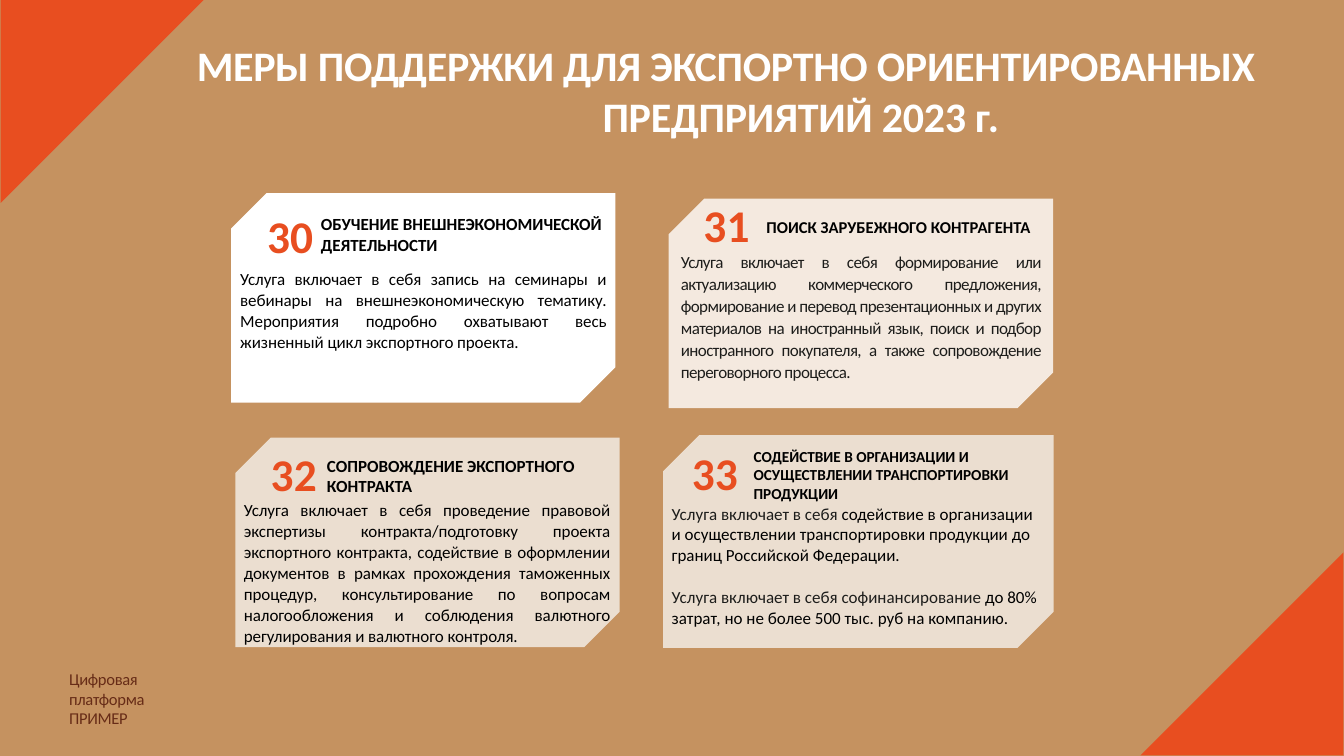
from dataclasses import dataclass

from pptx import Presentation
from pptx.dml.color import RGBColor
from pptx.enum.shapes import MSO_SHAPE
from pptx.enum.text import MSO_ANCHOR, MSO_AUTO_SIZE, PP_ALIGN
from pptx.util import Emu, Pt

PX = 9144
FONT = "Calibri"
SAND = RGBColor(0xC5, 0x92, 0x60)
ORANGE = RGBColor(0xE8, 0x4E, 0x20)
WHITE = RGBColor(0xFF, 0xFF, 0xFF)
CREAM = RGBColor(0xF4, 0xE9, 0xDF)
BEIGE = RGBColor(0xEB, 0xDE, 0xD0)
BLACK = RGBColor(0, 0, 0)
CHARCOAL = RGBColor(0x1D, 0x1D, 0x1B)
BROWN = RGBColor(0x67, 0x2C, 0x17)


@dataclass
class Card:
    """One support measure; part boxes are offsets from the card's corner."""
    box: tuple
    fill: RGBColor
    number: str
    number_box: tuple
    heading: str
    heading_box: tuple
    heading_size: float
    body: list
    body_box: tuple
    line_spacing: float
    alignment: PP_ALIGN = PP_ALIGN.JUSTIFY
    tracking: float = -0.1


CARDS = [
    Card((378, 316, 629, 343), WHITE, "30", (59, 24, 90, 91),
         "ОБУЧЕНИЕ ВНЕШНЕЭКОНОМИЧЕСКОЙ ДЕЯТЕЛЬНОСТИ", (147, 34, 489, 80), 20,
         [[("Услуга включает в себя запись на семинары и вебинары на "
            "внешнеэкономическую тематику. Мероприятия подробно охватывают "
            "весь жизненный цикл экспортного проекта.", BLACK)]],
         (15, 122, 599, 150), 1.03),
    Card((1094, 325, 629, 343), CREAM, "31", (57, -2, 90, 91),
         "ПОИСК ЗАРУБЕЖНОГО КОНТРАГЕНТА", (160, 30, 469, 37), 19.5,
         [[("Услуга включает в себя формирование или актуализацию "
            "коммерческого предложения, формирование и перевод "
            "презентационных и других материалов на иностранный язык, поиск "
            "и подбор иностранного покупателя, а также сопровождение "
            "переговорного процесса.", CHARCOAL)]],
         (20, 84, 589, 220), 1.08, tracking=-0.7),
    Card((385, 716, 629, 343), BEIGE, "32", (58, 14, 90, 91),
         "СОПРОВОЖДЕНИЕ ЭКСПОРТНОГО КОНТРАКТА", (150, 29, 428, 80), 20,
         [[("Услуга включает в себя проведение правовой экспертизы "
            "контракта/подготовку проекта экспортного контракта, содействие "
            "в оформлении документов в рамках прохождения таможенных "
            "процедур, консультирование по вопросам налогообложения и "
            "соблюдения валютного регулирования и валютного контроля.",
            BLACK)]],
         (14, 101, 599, 242), 1.03),
    Card((1085, 712, 639, 348), BEIGE, "33", (47, 17, 90, 91),
         "СОДЕЙСТВИЕ В ОРГАНИЗАЦИИ И ОСУЩЕСТВЛЕНИИ ТРАНСПОРТИРОВКИ ПРОДУКЦИИ",
         (148, 20, 441, 95), 18,
         [[("Услуга включает в себя ", CHARCOAL),
           ("содействие в организации и осуществлении транспортировки "
            "продукции до границ Российской Федерации.", BLACK)],
          [("Услуга включает в себя софинансирование ", CHARCOAL),
           ("до 80% затрат, но не более 500 тыс. руб на компанию.", BLACK)]],
         (14, 111, 599, 237), 1.01, PP_ALIGN.LEFT, 0),
]


def place(box):
    """Turn a px box into EMU lengths."""
    return [Emu(length * PX) for length in box]


def inside(box, part):
    """Move a part's box from card offsets to slide coordinates."""
    return (box[0] + part[0], box[1] + part[1], part[2], part[3])


def format_frame(frame):
    """Give a text frame no margins, top anchoring and wrapping."""
    frame.margin_left = frame.margin_right = 0
    frame.margin_top = frame.margin_bottom = 0
    frame.vertical_anchor = MSO_ANCHOR.TOP
    frame.auto_size = MSO_AUTO_SIZE.NONE
    frame.word_wrap = True


def format_paragraph(paragraph, size, color, bold=False, tracking=0,
                     alignment=PP_ALIGN.LEFT, line_spacing=1.0):
    """Set the font, letter spacing and layout of a paragraph."""
    paragraph.alignment = alignment
    paragraph.line_spacing = line_spacing
    font = paragraph.font
    font.name, font.size, font.bold = FONT, Pt(size), bold
    font.color.rgb = color
    properties = paragraph._p.get_or_add_pPr().get_or_add_defRPr()
    properties.set("spc", str(round(tracking * 100)))


def add_text(slide, box, paragraphs, size, **layout):
    """Add a text box of paragraphs, each a list of text and colour pairs."""
    frame = slide.shapes.add_textbox(*place(box)).text_frame
    format_frame(frame)
    for index, pieces in enumerate(paragraphs):
        paragraph = frame.add_paragraph() if index else frame.paragraphs[0]
        format_paragraph(paragraph, size, pieces[0][1], **layout)
        for text, color in pieces:
            run = paragraph.add_run()
            run.text = text
            if color != pieces[0][1]:
                run.font.color.rgb = color
    return frame


def add_filled(slide, kind, box, color):
    """Add a plain filled shape without line or shadow."""
    shape = slide.shapes.add_shape(kind, *place(box))
    shape.shadow.inherit = False
    shape.fill.solid()
    shape.fill.fore_color.rgb = color
    shape.line.fill.background()
    return shape


def add_corner(slide, box, rotation):
    """Add an orange triangle in a corner of the slide."""
    corner = add_filled(slide, MSO_SHAPE.RIGHT_TRIANGLE, box, ORANGE)
    corner.rotation = rotation


def add_title(slide, box):
    """Fill the title placeholder with the hanging heading."""
    title = slide.shapes.title
    title.left, title.top, title.width, title.height = place(box)
    format_frame(title.text_frame)
    paragraph = title.text_frame.paragraphs[0]
    paragraph.text = ("МЕРЫ ПОДДЕРЖКИ ДЛЯ ЭКСПОРТНО ОРИЕНТИРОВАННЫХ "
                      "ПРЕДПРИЯТИЙ 2023 г.")
    format_paragraph(paragraph, 49.5, WHITE, bold=True, tracking=-0.3)
    properties = paragraph._p.get_or_add_pPr()
    properties.set("marL", str(665 * PX))
    properties.set("indent", str(-664 * PX))


def add_card(slide, card):
    """Add a snipped card with its number, heading and description."""
    panel = add_filled(slide, MSO_SHAPE.SNIP_2_DIAG_RECTANGLE, card.box,
                       card.fill)
    panel.adjustments[0], panel.adjustments[1] = 0.17, 0
    add_text(slide, inside(card.box, card.number_box),
             [[(card.number, ORANGE)]], 53.4, bold=True, tracking=0.2)
    add_text(slide, inside(card.box, card.heading_box),
             [[(card.heading, BLACK)]], card.heading_size, bold=True)
    frame = add_text(slide, inside(card.box, card.body_box), card.body, 20,
                     tracking=card.tracking, alignment=card.alignment,
                     line_spacing=card.line_spacing)
    for paragraph in frame.paragraphs[1:]:
        paragraph.space_before = Pt(26)


def add_platform_label(slide, box):
    """Add the platform's name at the bottom left."""
    add_text(slide, box, [[("Цифровая платформа", BROWN)],
                          [("ПРИМЕР", BROWN)]],
             19.5, tracking=-0.4, line_spacing=Pt(23.1))


def main():
    """Build the slide and save it."""
    presentation = Presentation()
    presentation.slide_width, presentation.slide_height = place((2199, 1237))
    slide = presentation.slides.add_slide(presentation.slide_layouts[5])
    slide.background.fill.solid()
    slide.background.fill.fore_color.rgb = SAND
    add_corner(slide, (1, 0, 332, 332), 90)
    add_corner(slide, (1866, 904, 332, 332), 270)
    add_title(slide, (321, 65, 1745, 168))
    for card in CARDS:
        add_card(slide, card)
    add_platform_label(slide, (113, 1095, 160, 100))
    presentation.save("out.pptx")


if __name__ == "__main__":
    main()
